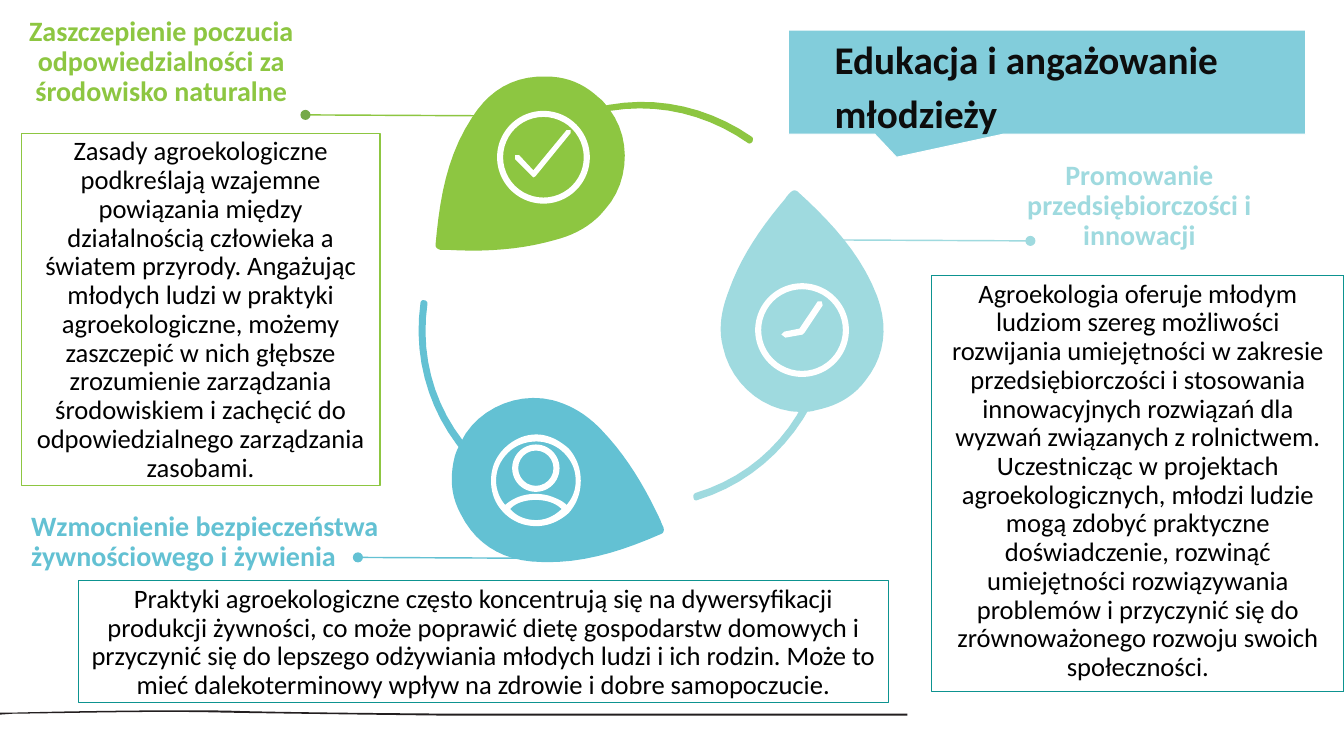
from pptx import Presentation
from pptx.dml.color import RGBColor
from pptx.enum import shapes, text
from pptx.oxml import parse_xml
from pptx.oxml.ns import nsdecls, qn
from pptx.util import Inches, Pt

COLOURS = {
    "green": "8DC641", "dark_green": "75A949", "pale": "9FDADF", "blue": "63C1D3",
    "teal": "0D9390", "white": "FFFFFF", "black": "000000", "title": "0D0D0D", "ground": "231F20",
}
FONT = "Calibri"

# Outlines in hundredths of an inch: pairs are corners, sixes are Bezier curves
GREEN_LEAF = [(162, 22), (147, 8, 130, 1, 110, 1), (77, 0, 53, 15, 36, 42), (11, 80, 4, 123, 0, 168),
              (0, 171, 2, 172, 5, 173), (13, 173), (49, 175, 84, 173, 119, 163),
              (138, 158, 155, 149, 168, 133), (190, 109, 194, 70, 178, 42), (178, 42, 169, 27, 162, 22)]
GREEN_TAIL = [(4, 92), (3, 92, 2, 91, 2, 90), (0, 89, 0, 87, 1, 86), (30, 45, 74, 17, 124, 9),
              (174, 0, 224, 12, 266, 41), (267, 42, 267, 44, 266, 46), (265, 47, 263, 48, 262, 47),
              (222, 19, 174, 7, 125, 15), (77, 24, 35, 50, 6, 90), (6, 91, 5, 92, 4, 92)]
PALE_LEAF = [(97, 219), (117, 215, 134, 206, 146, 190), (166, 165, 169, 136, 158, 106),
             (142, 64, 112, 32, 79, 2), (76, 0, 74, 1, 72, 3), (70, 5, 68, 7, 67, 9),
             (44, 36, 23, 66, 11, 100), (4, 118, 0, 137, 5, 156), (12, 189, 39, 215, 72, 220),
             (72, 220, 89, 222, 97, 219)]
PALE_TAIL = [(5, 241), (3, 242, 1, 241, 1, 239), (0, 237, 1, 235, 3, 234), (50, 220, 88, 188, 110, 145),
             (133, 101, 137, 52, 123, 5), (122, 3, 123, 1, 125, 1), (126, 0, 128, 1, 129, 3),
             (144, 51, 140, 103, 117, 148), (93, 192, 54, 226, 5, 241)]
BLUE_LEAF = [(5, 64), (0, 84, 1, 103, 11, 121), (25, 149, 49, 165, 81, 168), (126, 172, 168, 159, 209, 141),
             (212, 140, 213, 138, 212, 134), (211, 132, 210, 130, 209, 127), (194, 95, 176, 64, 151, 38),
             (137, 23, 121, 13, 102, 8), (70, 0, 34, 14, 16, 41), (16, 41, 7, 56, 5, 64)]
BLUE_TAIL = [(169, 218), (168, 218), (118, 211, 73, 185, 43, 144), (13, 104, 0, 54, 7, 4),
             (7, 2, 9, 0, 11, 1), (13, 1, 14, 3, 14, 4), (7, 53, 19, 101, 49, 140),
             (78, 179, 120, 205, 169, 212), (171, 212, 172, 214, 172, 216), (172, 217, 170, 218, 169, 218)]
CHECK = [(56, 4), (21, 47), (19, 48), (18, 47), (1, 30), (1, 26), (5, 26), (19, 41), (52, 1), (56, 1)]
HANDS = [(41, 5), (23, 32), (21, 34), (4, 37), (0, 34), (3, 31), (18, 28), (36, 1), (40, 1)]
BADGE = [(77, 14), (68, 6, 57, 0, 45, 0), (32, 0, 21, 6, 13, 14), (4, 23, 0, 34, 0, 46),
         (0, 58, 4, 69, 13, 78), (21, 86, 32, 91, 45, 91), (57, 91, 68, 86, 77, 78),
         (85, 69, 89, 58, 89, 46), (89, 34, 85, 23, 77, 14)]
SHOULDERS = [(19, 74), (24, 68, 34, 65, 44, 65), (55, 65, 64, 68, 70, 74), (63, 81, 54, 85, 45, 85),
             (34, 85, 25, 81, 19, 74)]
BACKDROP = [(75, 70), (71, 66, 66, 64, 61, 62), (56, 60, 50, 59, 44, 59), (32, 59, 22, 63, 14, 70),
            (8, 63, 5, 54, 5, 46), (5, 35, 9, 26, 17, 18), (24, 11, 34, 7, 45, 7),
            (55, 7, 65, 11, 72, 18), (80, 26, 84, 35, 84, 46), (84, 55, 81, 63, 75, 70)]
GROUND = [(0, 2), (14, 2), (52, 1, 155, -1, 223, 0), (281, 2, 441, 3, 443, 3), (900, 3), (900, 5),
          (443, 5), (441, 5, 280, 3, 223, 2), (155, 0, 52, 3, 14, 3), (0, 4)]


def rgb(colour):
    return RGBColor.from_string(COLOURS[colour])


def paint(shape, fill=None, line=None, width=0.75):
    shape.shadow.inherit = False
    if fill:
        shape.fill.solid()
        shape.fill.fore_color.rgb = rgb(fill)
    else:
        shape.fill.background()
    if line:
        shape.line.color.rgb = rgb(line)
        shape.line.width = Pt(width)
    else:
        shape.line.fill.background()


def trace(outline, steps=10):
    """Turn an outline into points in EMU."""
    points = [outline[0]]
    for segment in outline[1:]:
        if len(segment) == 2:
            points.append(segment)
            continue
        knots = [points[-1], segment[:2], segment[2:4], segment[4:]]
        for step in range(1, steps + 1):
            t = step / steps
            weights = ((1 - t) ** 3, 3 * t * (1 - t) ** 2, 3 * t * t * (1 - t), t ** 3)
            points.append(tuple(sum(w * knot[axis] for w, knot in zip(weights, knots)) for axis in (0, 1)))
    return [(Inches(x / 100), Inches(y / 100)) for x, y in points]


def add_outline(slide, left, top, colour, *outlines):
    contours = [trace(outline) for outline in outlines]
    builder = slide.shapes.build_freeform(*contours[0][0])
    for index, points in enumerate(contours):
        if index:
            builder.move_to(*points[0])
        builder.add_line_segments(points[1:], close=True)
    paint(builder.convert_to_shape(Inches(left), Inches(top)), colour)


def add_preset(slide, kind, box, **style):
    shape = slide.shapes.add_shape(kind, *map(Inches, box))
    paint(shape, **style)
    return shape


def add_ring(slide, left, top, size):
    ring = add_preset(slide, shapes.MSO_SHAPE.DONUT, (left, top, size, size), fill="white")
    ring.adjustments[0] = 0.06 / size


def write(shape, words, size, colour, bold=False, align=text.PP_ALIGN.CENTER, spacing=0.9, inset=0.05):
    frame = shape.text_frame
    frame.word_wrap = True
    frame.vertical_anchor = text.MSO_ANCHOR.TOP
    frame.margin_left = frame.margin_right = Inches(0.1)
    frame.margin_top = frame.margin_bottom = Inches(inset)
    paragraph = frame.paragraphs[0]
    paragraph.alignment = align
    paragraph.line_spacing = spacing
    run = paragraph.add_run()
    run.text = words
    run.font.name, run.font.size, run.font.bold = FONT, Pt(size), bold
    run.font.color.rgb = rgb(colour)


def add_text(slide, box, words, size, colour, **style):
    write(slide.shapes.add_textbox(*map(Inches, box)), words, size, colour, bold=True, **style)


def add_petal(slide, box, colour, leaf, tail, tail_offset):
    left, top = box
    add_outline(slide, left, top, colour, leaf)
    add_outline(slide, left + tail_offset[0], top + tail_offset[1], colour, tail)


def add_check_icon(slide, box):
    left, top = box
    add_ring(slide, left, top, 0.92)
    add_outline(slide, left + 0.17, top + 0.18, "white", CHECK)


def add_clock_icon(slide, box):
    left, top = box
    add_ring(slide, left, top, 0.93)
    add_outline(slide, left + 0.26, top + 0.17, "white", HANDS)


def add_person_icon(slide, box):
    left, top = box
    add_outline(slide, left, top, "white", BADGE, SHOULDERS, BACKDROP)
    add_ring(slide, left + 0.21, top + 0.1, 0.47)


def add_pointer(slide, box, reach, colour, dot_colour):
    """Draw a dot centred at the box corner and a line reaching towards the petal."""
    x, y = box
    line = slide.shapes.add_connector(shapes.MSO_CONNECTOR.STRAIGHT, Inches(x + reach),
                                      Inches(y + (0.01 if reach > 0 else -0.01)), Inches(x), Inches(y))
    line.line.color.rgb = rgb(colour)
    line.line.width = Pt(1.02)
    line._element.find(qn("p:spPr")).append(parse_xml(f"<a:effectLst {nsdecls('a')}/>"))
    add_preset(slide, shapes.MSO_SHAPE.OVAL, (x - 0.05, y - 0.05, 0.1, 0.1), fill=dot_colour)


def add_note(slide, box, border, words):
    shape = add_preset(slide, shapes.MSO_SHAPE.RECTANGLE, box, line=border)
    write(shape, words, 19, "black")


def add_banner(slide, box):
    left, top, width, height = box
    banner = add_preset(slide, shapes.MSO_SHAPE.ROUNDED_RECTANGULAR_CALLOUT, box, fill="blue", line="white")
    for index, value in enumerate((-0.291, 0.724, 0)):
        banner.adjustments[index] = value
    fill = banner._element.spPr.find(qn("a:solidFill"))
    fill[0].append(parse_xml(f'<a:alpha {nsdecls("a")} val="80000"/>'))
    add_text(slide, (left + 0.36, top - 0.12, 5.34, 0.76), "Edukacja i angażowanie młodzieży", 28, "title",
             align=text.PP_ALIGN.LEFT, spacing=1.15, inset=0.1)


def main():
    presentation = Presentation()
    presentation.slide_width, presentation.slide_height = Inches(13.33), Inches(7.5)
    slide = presentation.slides.add_slide(presentation.slide_layouts[6])

    # Ground line and title banner
    add_outline(slide, 0, 7.05, "ground", GROUND)
    add_banner(slide, (7.82, 0.3, 5.13, 1.03))

    # Cycle of three petals
    add_petal(slide, (7.12, 1.88), "pale", PALE_LEAF, PALE_TAIL, (-0.25, 0.67))
    add_petal(slide, (4.32, 0.75), "green", GREEN_LEAF, GREEN_TAIL, (0.48, 0.2))
    add_petal(slide, (4.46, 3.89), "blue", BLUE_LEAF, BLUE_TAIL, (-0.36, -0.92))
    add_person_icon(slide, (4.87, 4.31))
    add_clock_icon(slide, (7.49, 2.81))
    add_check_icon(slide, (4.93, 1.1))

    # Responsibility for the environment
    add_text(slide, (-0.1, 0.12, 3.4, 0.9),
             "Zaszczepienie poczucia odpowiedzialności za środowisko naturalne", 20, "green")
    add_note(slide, (0.21, 1.32, 3.56, 3.5), "green",
             "Zasady agroekologiczne podkreślają wzajemne powiązania między działalnością człowieka a światem "
             "przyrody. Angażując młodych ludzi w praktyki agroekologiczne, możemy zaszczepić w nich głębsze "
             "zrozumienie zarządzania środowiskiem i zachęcić do odpowiedzialnego zarządzania zasobami.")
    add_pointer(slide, (3.03, 1.14), 2.05, "green", "dark_green")

    # Food security
    add_text(slide, (0.21, 5.03, 3.85, 0.37), "Wzmocnienie bezpieczeństwa żywnościowego i żywienia", 20, "blue",
             align=text.PP_ALIGN.LEFT)
    add_note(slide, (0.78, 5.76, 8.03, 1.21), "teal",
             "Praktyki agroekologiczne często koncentrują się na dywersyfikacji produkcji żywności, co może "
             "poprawić dietę gospodarstw domowych i przyczynić się do lepszego odżywiania młodych ludzi i ich "
             "rodzin. Może to mieć dalekoterminowy wpływ na zdrowie i dobre samopoczucie.")
    add_pointer(slide, (3.55, 5.53), 2.05, "blue", "blue")

    # Entrepreneurship
    add_text(slide, (10.04, 1.55, 2.52, 0.37), "Promowanie przedsiębiorczości i innowacji", 20, "pale")
    add_note(slide, (9.24, 2.73, 4.09, 4.13), "teal",
             "Agroekologia oferuje młodym ludziom szereg możliwości rozwijania umiejętności w zakresie "
             "przedsiębiorczości i stosowania innowacyjnych rozwiązań dla wyzwań związanych z rolnictwem. "
             "Uczestnicząc w projektach agroekologicznych, młodzi ludzie mogą zdobyć praktyczne doświadczenie, "
             "rozwinąć umiejętności rozwiązywania problemów i przyczynić się do zrównoważonego rozwoju swoich "
             "społeczności.")
    add_pointer(slide, (10.22, 2.39), -2.04, "pale", "pale")

    presentation.save("out.pptx")


if __name__ == "__main__":
    main()
